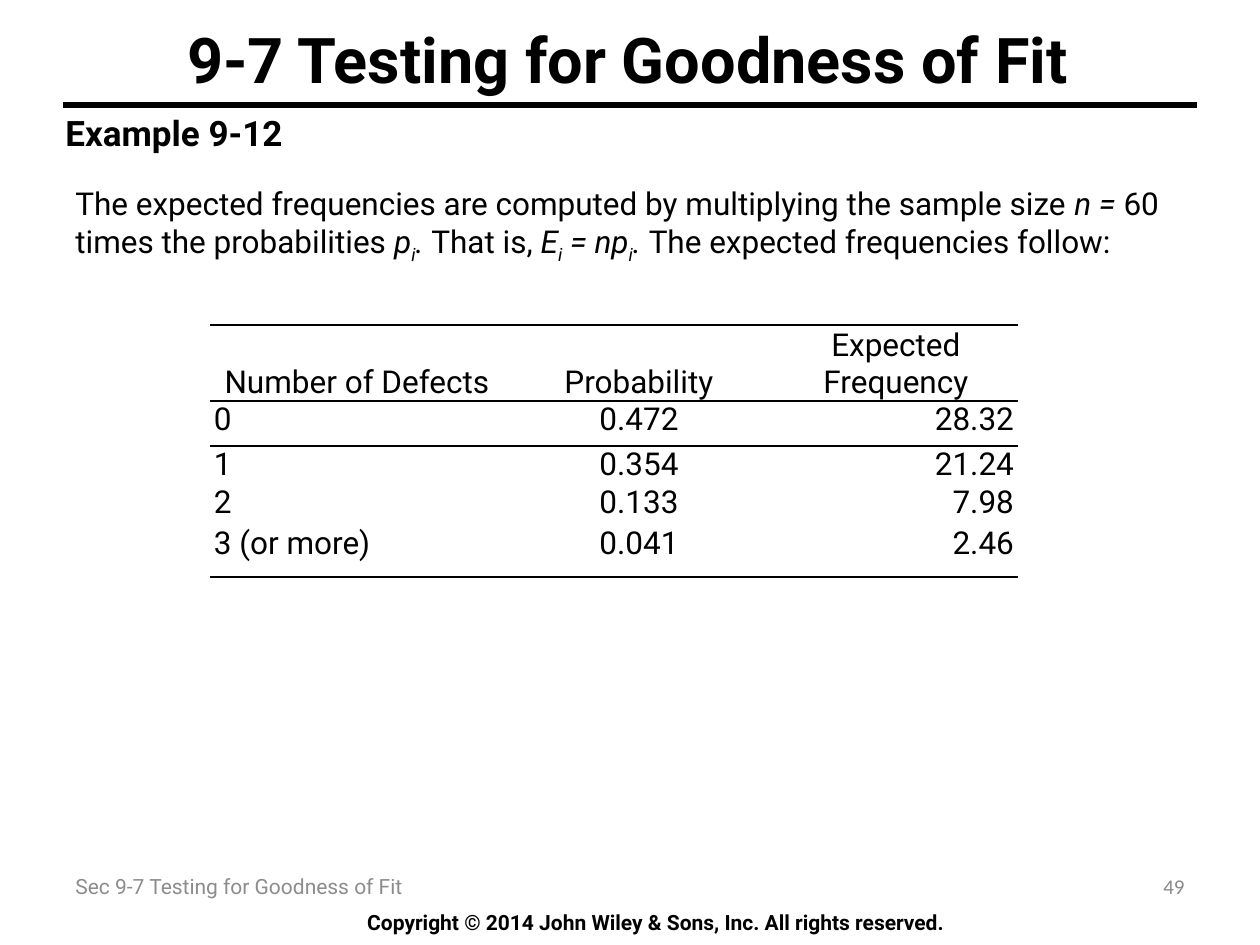
"""Build the slide on expected frequencies in goodness-of-fit testing."""
from lxml import etree
from pptx import Presentation
from pptx.dml.color import RGBColor
from pptx.enum.shapes import MSO_CONNECTOR
from pptx.enum.text import MSO_ANCHOR, PP_ALIGN
from pptx.oxml import parse_xml
from pptx.oxml.ns import nsdecls, qn
from pptx.util import Emu, Pt

PX = 914400 / 126
BLACK = RGBColor(0x00, 0x00, 0x00)
NUMBER_GRAY = RGBColor(0x89, 0x89, 0x89)
FOOTER_GRAY = RGBColor(0x8C, 0x8C, 0x8C)
LEFT, CENTER, RIGHT = PP_ALIGN.LEFT, PP_ALIGN.CENTER, PP_ALIGN.RIGHT
TOP, MIDDLE, BOTTOM = MSO_ANCHOR.TOP, MSO_ANCHOR.MIDDLE, MSO_ANCHOR.BOTTOM
STRAIGHT = MSO_CONNECTOR.STRAIGHT
NO_STYLE = "{2D5ABB26-0587-4C30-8999-92F81FD0307C}"


def px(*lengths):
    return [Emu(round(length * PX)) for length in lengths]


def write(frame, runs, size, align=LEFT, color=BLACK, bold=False, face="Roboto"):
    paragraph = frame.paragraphs[0]
    paragraph.alignment = align
    for text, style in runs:
        run = paragraph.add_run()
        run.text = text
        font_format = {"name": face, "size": Pt(size), "bold": bold, "italic": style != ""}
        for attribute, value in font_format.items():
            setattr(run.font, attribute, value)
        run.font.color.rgb = color
        if style == "sub":
            run.font._element.set("baseline", "-25000")


prs = Presentation()
prs.slide_width, prs.slide_height = px(1260, 945)
slide = prs.slides.add_slide(prs.slide_layouts[5])

title = slide.shapes.title
title.left, title.top, title.width, title.height = px(105, 0, 1061, 116)
title.text_frame.vertical_anchor = MIDDLE
write(title.text_frame, [("9-7 Testing for Goodness of Fit ", "")], 36, CENTER, bold=True)

rule = slide.shapes.add_connector(STRAIGHT, *px(63, 105, 1197, 105))
rule.line.color.rgb = BLACK
rule.line.width = Pt(3)
etree.SubElement(rule._element.spPr, qn("a:effectLst"))

explanation = [
    ("The expected frequencies are computed by multiplying the sample size ", ""),
    ("n = ", "italic"),
    ("60 times the probabilities ", ""),
    ("p", "italic"),
    ("i", "sub"),
    (". ", "italic"),
    ("That is, ", ""),
    ("E", "italic"),
    ("i", "sub"),
    (" = np", "italic"),
    ("i", "sub"),
    (". ", "italic"),
    ("The expected frequencies follow:", ""),
]
copyright_line = [("Copyright © 2014 John Wiley & Sons, Inc. All rights reserved.", "")]
section = [("Sec 9-7 Testing for Goodness of Fit", "")]
texts = [
    ((210, 903, 892, 38), TOP, copyright_line, {"size": 12, "align": CENTER, "bold": True}),
    ((1050, 861, 147, 50), MIDDLE, [("49", "")],
     {"size": 12, "align": RIGHT, "color": NUMBER_GRAY, "face": "Calibri"}),
    ((63, 861, 683, 50), MIDDLE, section, {"size": 12, "color": FOOTER_GRAY}),
    ((53, 105, 1071, 55), TOP, [("Example 9-12", "")], {"size": 20, "bold": True}),
    ((63, 178, 1124, 127), TOP, explanation, {"size": 18}),
]
for place, anchor, runs, text_format in texts:
    frame = slide.shapes.add_textbox(*px(*place)).text_frame
    frame.word_wrap = True
    frame.vertical_anchor = anchor
    write(frame, runs, **text_format)

frequencies = [
    ("Number of Defects", "Probability", "Expected Frequency"),
    ("0", "0.472", "28.32"),
    ("1", "0.354", "21.24"),
    ("2", "0.133", "7.98"),
    ("3 (or more)", "0.041", "2.46"),
]
column_widths = px(294, 270, 244)
row_heights = px(76, 45, 37, 41, 52)
row_borders = {0: ("lnB", "lnT"), 1: ("lnT",), 4: ("lnB",)}
table = slide.shapes.add_table(5, 3, *px(210, 325, 808, 251)).table
table.first_row = table.horz_banding = False
table._tbl.tblPr.find(qn("a:tableStyleId")).text = NO_STYLE
for column, width in zip(table.columns, column_widths):
    column.width = width
for row, height in zip(table.rows, row_heights):
    row.height = height

for r, values in enumerate(frequencies):
    for c, value in enumerate(values):
        cell = table.cell(r, c)
        cell.margin_left, cell.margin_top, cell.margin_right, cell.margin_bottom = px(4, 0, 4, 0)
        cell.vertical_anchor = TOP if r else BOTTOM
        cell.fill.background()
        write(cell.text_frame, [(value, "")], 18, (LEFT, CENTER, RIGHT)[c] if r else CENTER)
        for side in row_borders.get(r, ()):
            border = parse_xml(
                f'<a:{side} {nsdecls("a")} w="{Pt(1)}"><a:solidFill>'
                f'<a:srgbClr val="{BLACK}"/></a:solidFill></a:{side}>'
            )
            cell._tc.get_or_add_tcPr().insert(0, border)

prs.save("out.pptx")
